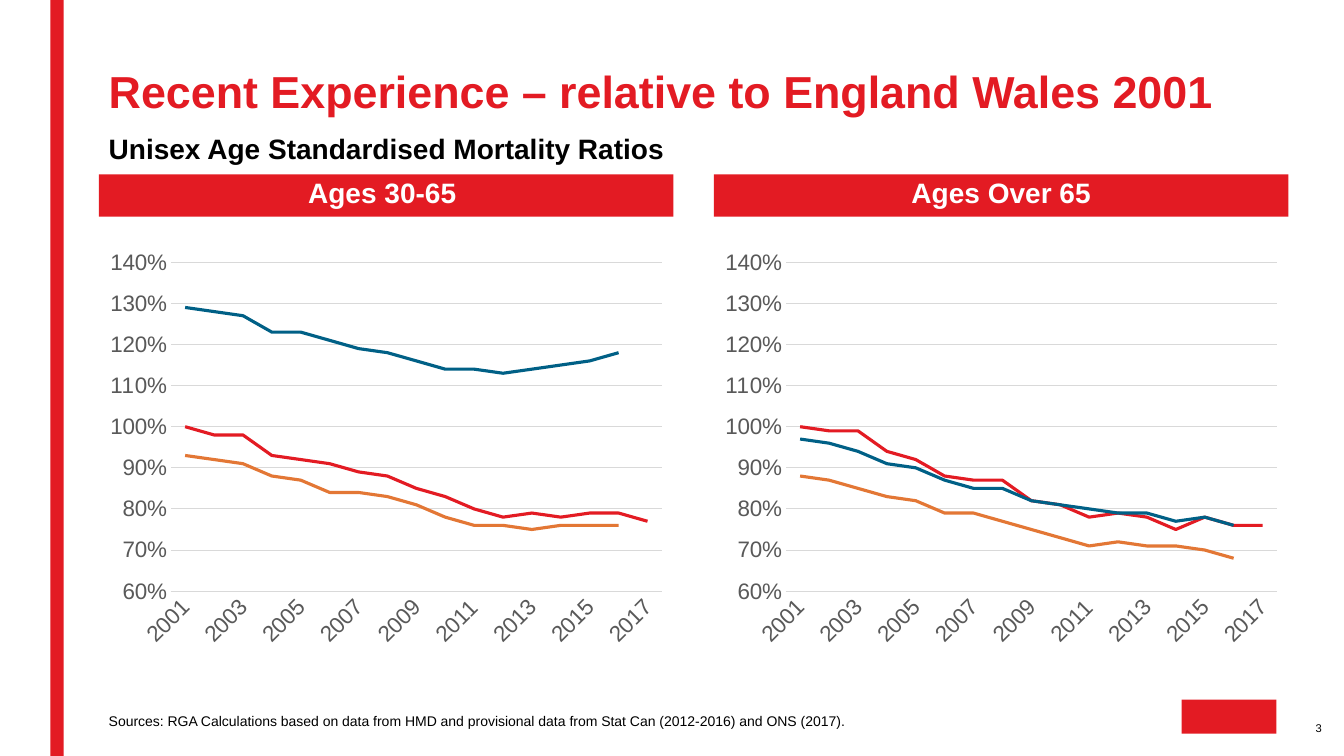
from lxml.etree import SubElement
from pptx import Presentation
from pptx.chart.data import CategoryChartData
from pptx.dml.color import RGBColor
from pptx.enum.chart import XL_CHART_TYPE, XL_MARKER_STYLE, XL_TICK_MARK
from pptx.enum.shapes import MSO_SHAPE
from pptx.enum.text import MSO_ANCHOR, PP_ALIGN
from pptx.oxml.ns import qn
from pptx.util import Inches, Pt

COLORS = {"red": "E31B23", "blue": "006086", "orange": "E37735", "black": "000000",
          "white": "FFFFFF", "label": "595959", "grid": "D9D9D9"}
YEARS = [str(year) for year in range(2001, 2018)]
LEFT, COLUMN, STEP = 7.35, 42.76, 45.76
WIDE = 87.7

WORKING_AGES = {
    "red": [1, .98, .98, .93, .92, .91, .89, .88, .85, .83, .8, .78, .79, .78, .79, .79, .77],
    "blue": [1.29, 1.28, 1.27, 1.23, 1.23, 1.21, 1.19, 1.18, 1.16, 1.14, 1.14, 1.13, 1.14,
             1.15, 1.16, 1.18, None],
    "orange": [.93, .92, .91, .88, .87, .84, .84, .83, .81, .78, .76, .76, .75, .76, .76,
               .76, None],
}
OLDER_AGES = {
    "red": [1, .99, .99, .94, .92, .88, .87, .87, .82, .81, .78, .79, .78, .75, .78, .76, .76],
    "blue": [.97, .96, .94, .91, .9, .87, .85, .85, .82, .81, .8, .79, .79, .77, .78, .76, None],
    "orange": [.88, .87, .85, .83, .82, .79, .79, .77, .75, .73, .71, .72, .71, .71, .7,
               .68, None],
}


class Slide:
    """Draws styled elements placed by percentages of the slide's width and height."""

    def __init__(self, deck):
        self.deck = deck
        self.slide = deck.slides.add_slide(deck.slide_layouts[6])
        self.font_name = "Arial"

    def place(self, left, top, width, height):
        across, down = self.deck.slide_width / 100, self.deck.slide_height / 100
        return [int(left * across), int(top * down), int(width * across), int(height * down)]

    def color(self, key):
        return RGBColor.from_string(COLORS[key])

    def style(self, font, size, color, bold=False):
        font.name, font.size, font.bold = self.font_name, Pt(size), bold
        font.color.rgb = self.color(color)

    def fill_text(self, frame, words, size, color, bold=False, align=PP_ALIGN.LEFT,
                  anchor=MSO_ANCHOR.TOP, margins=(0.1, 0.05, 0.1, 0.05)):
        frame.text = words
        frame.word_wrap = True
        frame.vertical_anchor = anchor
        (frame.margin_left, frame.margin_top,
         frame.margin_right, frame.margin_bottom) = map(Inches, margins)
        line = frame.paragraphs[0]
        line.alignment, line.line_spacing = align, 0.9
        self.style(line.runs[0].font, size, color, bold)

    def text(self, box, words, size, color, **options):
        self.fill_text(self.slide.shapes.add_textbox(*self.place(*box)).text_frame,
                       words, size, color, **options)

    def block(self, *box):
        bar = self.slide.shapes.add_shape(MSO_SHAPE.RECTANGLE, *self.place(*box))
        bar.shadow.inherit = False
        bar.fill.solid()
        bar.fill.fore_color.rgb = self.color("red")
        bar.line.fill.background()
        return bar

    def heading(self, box, words):
        self.fill_text(self.block(*box).text_frame, words, 20, "white", bold=True,
                       align=PP_ALIGN.CENTER)

    def line_chart(self, box, ratios):
        data = CategoryChartData(number_format="0%")
        data.categories = YEARS
        for number, values in enumerate(ratios.values(), 1):
            data.add_series(f"Series {number}", values)
        chart = self.slide.shapes.add_chart(
            XL_CHART_TYPE.LINE, *self.place(*box), data).chart
        chart.has_legend = chart.has_title = False
        self.style(chart.font, 10, "black")
        chart.plots[0].vary_by_categories = False
        for series, color in zip(chart.plots[0].series, ratios):
            series.smooth = False
            series.marker.style = XL_MARKER_STYLE.NONE
            series.format.line.color.rgb = self.color(color)
            series.format.line.width = Pt(2.25)
        self.axes(chart.category_axis, chart.value_axis)

    def axes(self, years, ratios):
        for axis in (years, ratios):
            axis.major_tick_mark = axis.minor_tick_mark = XL_TICK_MARK.NONE
            self.style(axis.tick_labels.font, 16, "label")
        ratios.minimum_scale, ratios.maximum_scale, ratios.major_unit = 0.6, 1.4, 0.1
        ratios.tick_labels.number_format = "0%"
        ratios.tick_labels.number_format_is_linked = False
        ratios.format.line.fill.background()
        for rule in (years.format.line, ratios.major_gridlines.format.line):
            rule.color.rgb = self.color("grid")
            rule.width = Pt(0.75)
        element = years._element
        element.find(f"{qn('c:txPr')}/{qn('a:bodyPr')}").set("rot", "-2700000")
        skip = SubElement(element, qn("c:tickLblSkip"))
        skip.set("val", "2")
        element.find(qn("c:lblOffset")).addnext(skip)


def main():
    deck = Presentation()
    deck.slide_width, deck.slide_height = Inches(13.33), Inches(7.5)
    slide = Slide(deck)
    slide.block(3.75, 0, 0.98, 100)
    slide.block(87.92, 92.53, 7.05, 4.53)
    slide.text((LEFT, 0, WIDE, 16.27), "Recent Experience – relative to England Wales 2001",
               32, "red", bold=True, anchor=MSO_ANCHOR.BOTTOM)
    slide.text((LEFT, 17.2, WIDE, 5.6), "Unisex Age Standardised Mortality Ratios",
               20, "black", bold=True)
    panels = [("Ages 30-65 ", WORKING_AGES), ("Ages Over 65", OLDER_AGES)]
    for index, (ages, ratios) in enumerate(panels):
        left = LEFT + index * STEP
        slide.heading((left, 23.07, COLUMN, 5.6), ages)
        slide.line_chart((left, 32, COLUMN, 54.67), ratios)
    slide.text((LEFT, 90.53, 73.44, 6),
               "Sources: RGA Calculations based on data from HMD and provisional data "
               "from Stat Can (2012-2016) and ONS (2017).",
               10, "black", anchor=MSO_ANCHOR.BOTTOM, margins=(0.1, 0, 0, 0))
    slide.text((93.55, 95.47, 4.8, 1.73), "3", 8, "black", align=PP_ALIGN.RIGHT,
               anchor=MSO_ANCHOR.BOTTOM, margins=(0, 0, 0, 0))
    deck.save("out.pptx")


if __name__ == "__main__":
    main()
